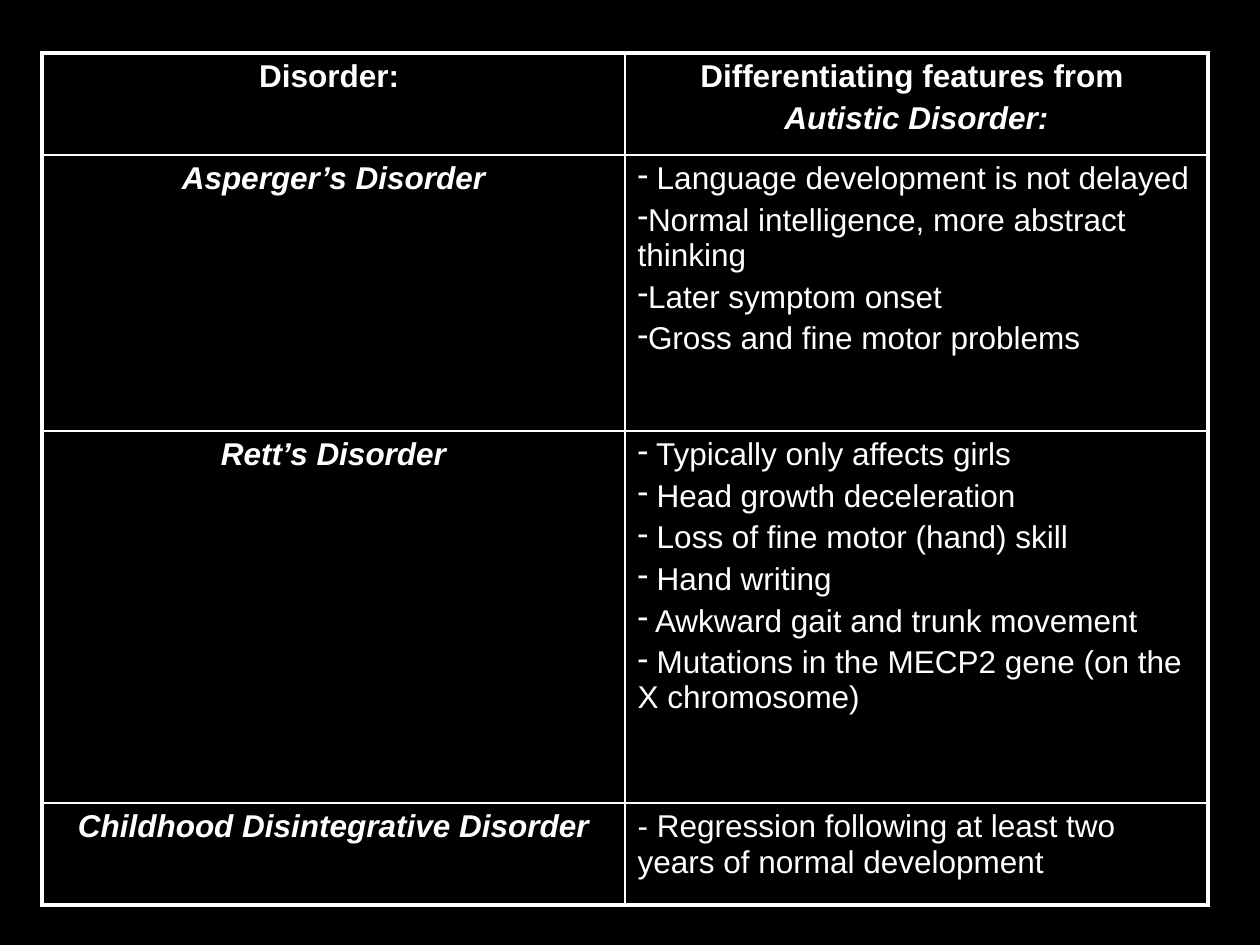
from dataclasses import dataclass

import lxml.etree
import pptx
import pptx.dml.color
import pptx.enum.text
import pptx.oxml.ns
import pptx.util

EMU_PER_PX = 914400 / 126
BLACK = "000000"
WHITE = "FFFFFF"
FONT = "Arial"
TEXT_SIZE = 18
THIN, THICK = 1, 2.25
COLUMN_WIDTHS = [583, 583]


@dataclass
class Line:
    text: str
    heading: bool = False
    italic: bool = False
    dash: bool = False


@dataclass
class Row:
    height: int
    disorder: list[Line]
    features: list[Line]


def dashed(*texts: str) -> list[Line]:
    return [Line(text, dash=True) for text in texts]


def disorder_name(text: str) -> list[Line]:
    return [Line(text, heading=True, italic=True)]


ROWS = [
    Row(102, [Line("Disorder: ", heading=True)],
        [Line("Differentiating features from ", heading=True),
         Line("Autistic Disorder:", heading=True, italic=True)]),
    Row(276, disorder_name("Asperger’s Disorder"),
        dashed(" Language development is not delayed",
               "Normal intelligence, more abstract thinking",
               "Later symptom onset",
               "Gross and fine motor problems")),
    Row(372, disorder_name("Rett’s Disorder"),
        dashed(" Typically only affects girls",
               " Head growth deceleration",
               " Loss of fine motor (hand) skill",
               " Hand writing",
               " Awkward gait and trunk movement",
               " Mutations in the MECP2 gene (on the X chromosome)")),
    Row(102, disorder_name("Childhood Disintegrative Disorder"),
        [Line("- Regression following at least two years of normal development")]),
]


def px(length: int) -> pptx.util.Emu:
    return pptx.util.Emu(round(length * EMU_PER_PX))


def color(value: str) -> pptx.dml.color.RGBColor:
    return pptx.dml.color.RGBColor.from_string(value)


def add_element(parent, tag: str, **attributes: str):
    return lxml.etree.SubElement(parent, pptx.oxml.ns.qn(tag), attributes)


def set_borders(cell, outer_sides: dict[str, bool]) -> None:
    """Draw the cell's four sides, thicker where they lie on the table's edge."""
    properties = cell._tc.get_or_add_tcPr()
    for side, outer in outer_sides.items():
        width = pptx.util.Pt(THICK if outer else THIN)
        border = add_element(properties, f"a:ln{side}", w=str(int(width)))
        fill = add_element(border, "a:solidFill")
        add_element(fill, "a:srgbClr", val=WHITE)


def write_line(para, line: Line) -> None:
    para.text = line.text
    para.space_before = pptx.util.Pt(TEXT_SIZE * 0.2)
    alignment = pptx.enum.text.PP_ALIGN
    para.alignment = alignment.CENTER if line.heading else alignment.LEFT
    if line.dash:
        add_element(para._p.get_or_add_pPr(), "a:buChar", char="-")
    for span in para.runs:
        span.font.name = FONT
        span.font.size = pptx.util.Pt(TEXT_SIZE)
        span.font.bold = line.heading
        span.font.italic = line.italic
        span.font.color.rgb = color(WHITE)


def write_cell(cell, lines: list[Line]) -> None:
    frame = cell.text_frame
    frame.text = "\n".join(line.text for line in lines)
    for para, line in zip(frame.paragraphs, lines):
        write_line(para, line)


def add_disorder_table(page) -> None:
    height = sum(row.height for row in ROWS)
    table = page.shapes.add_table(
        len(ROWS), len(COLUMN_WIDTHS), px(42), px(53),
        px(sum(COLUMN_WIDTHS)), px(height)).table
    table.first_row = False
    table.horz_banding = False
    for column, width in zip(table.columns, COLUMN_WIDTHS):
        column.width = px(width)
    for row_index, row in enumerate(ROWS):
        table.rows[row_index].height = px(row.height)
        for column_index, lines in enumerate([row.disorder, row.features]):
            cell = table.cell(row_index, column_index)
            set_borders(cell, {
                "L": column_index == 0,
                "R": column_index == len(COLUMN_WIDTHS) - 1,
                "T": row_index == 0,
                "B": row_index == len(ROWS) - 1,
            })
            cell.fill.background()
            write_cell(cell, lines)


def main() -> None:
    deck = pptx.Presentation()
    deck.slide_width, deck.slide_height = px(1260), px(945)
    page = deck.slides.add_slide(deck.slide_layouts[6])
    page.background.fill.solid()
    page.background.fill.fore_color.rgb = color(BLACK)
    add_disorder_table(page)
    deck.save("out.pptx")


if __name__ == "__main__":
    main()
